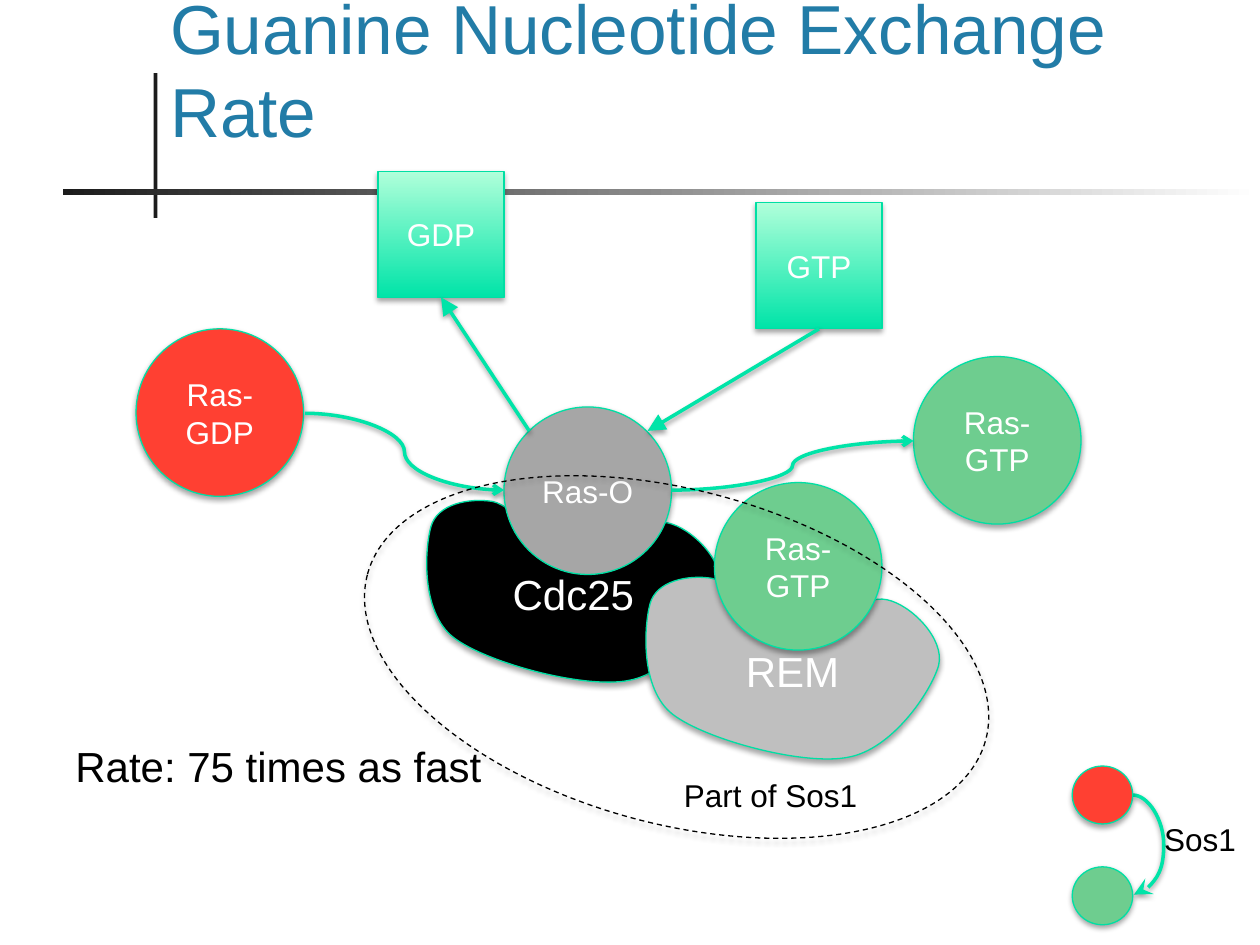
from dataclasses import dataclass

from lxml import etree
from pptx import Presentation
from pptx.dml.color import RGBColor
from pptx.enum.dml import MSO_LINE
from pptx.enum.shapes import MSO_CONNECTOR, MSO_SHAPE
from pptx.enum.text import MSO_ANCHOR, MSO_AUTO_SIZE, PP_ALIGN
from pptx.oxml.ns import qn
from pptx.util import Inches, Pt

RECT, OVAL = MSO_SHAPE.RECTANGLE, MSO_SHAPE.OVAL
STRAIGHT, CURVE = MSO_CONNECTOR.STRAIGHT, MSO_CONNECTOR.CURVE
LEFT, CENTER = PP_ALIGN.LEFT, PP_ALIGN.CENTER
TOP, MIDDLE, BOTTOM = MSO_ANCHOR.TOP, MSO_ANCHOR.MIDDLE, MSO_ANCHOR.BOTTOM
BOTTOM_SITE = 2
CIRCLE = 1.33


@dataclass(frozen=True)
class Theme:
    font: str = "Arial"
    title: str = "227CA7"
    ink: str = "1C1C1C"
    black: str = "000000"
    white: str = "FFFFFF"
    outline: str = "00DFA4"
    arrow: str = "00E4A8"
    mint: str = "B0FFDA"
    red: str = "FF4032"
    green: str = "6ECD8F"
    gray: str = "A6A6A6"
    silver: str = "BFBFBF"
    title_size: float = 39.6
    large: int = 24
    body: int = 18


THEME = Theme()

# Start point, then three points (two controls and an end) per curve, in inches.
DOMAIN_START = (3.42, 4.18)
DOMAIN_CURVES = [
    (3.37, 4.36), (3.34, 4.86), (3.6, 5.06),
    (3.86, 5.26), (4.64, 5.47), (4.99, 5.4),
    (5.34, 5.34), (5.65, 4.88), (5.71, 4.67),
    (5.76, 4.46), (5.49, 4.19), (5.3, 4.15),
    (5.1, 4.1), (4.76, 4.42), (4.53, 4.39),
    (4.3, 4.36), (4.1, 4.02), (3.91, 3.98),
    (3.72, 3.95), (3.47, 4), (3.42, 4.18),
]


def rgb(color):
    return RGBColor.from_string(color)


def write_text(sp, text, size=THEME.body, color=THEME.white, align=CENTER,
               anchor=MIDDLE, wrap=True):
    tf = sp.text_frame
    tf.word_wrap = wrap
    tf.vertical_anchor = anchor
    p = tf.paragraphs[0]
    p.alignment = align
    r = p.add_run()
    r.text = text
    r.font.name = THEME.font
    r.font.size = Pt(size)
    r.font.color.rgb = rgb(color)


def paint(sp, fill):
    """Fill with one colour, a (colour, colour, angle) gradient, or nothing."""
    if fill is None:
        sp.fill.background()
    elif isinstance(fill, str):
        sp.fill.solid()
        sp.fill.fore_color.rgb = rgb(fill)
    else:
        sp.fill.gradient()
        sp.fill.gradient_angle = fill[2]
        for stop, color in zip(sp.fill.gradient_stops, fill):
            stop.color.rgb = rgb(color)


def add_shadow(sp, alpha, distance):
    """Append a soft downward shadow; call after fill and line are set."""
    effects = etree.SubElement(sp._element.spPr, qn("a:effectLst"))
    shadow = etree.SubElement(
        effects, qn("a:outerShdw"), blurRad=str(Pt(3.1)),
        dist=str(Pt(distance)), dir="5400000", rotWithShape="0")
    color = etree.SubElement(shadow, qn("a:srgbClr"), val=THEME.black)
    etree.SubElement(color, qn("a:alpha"), val=str(alpha * 1000))


def style_shape(sp, fill, line=THEME.outline):
    paint(sp, fill)
    sp.line.color.rgb = rgb(line)
    sp.line.width = Pt(0.75)
    add_shadow(sp, 35, 1.8)


def add_node(shapes, kind, x, y, w, h, fill, text=None):
    sp = shapes.add_shape(kind, Inches(x), Inches(y), Inches(w), Inches(h))
    style_shape(sp, fill)
    if text:
        write_text(sp, text)
    return sp


def add_rule(shapes, x, y, w, h, fill):
    sp = shapes.add_shape(RECT, Inches(x), Inches(y), Inches(w), Inches(h))
    paint(sp, fill)
    sp.line.fill.background()
    sp.shadow.inherit = False


def add_label(shapes, text, x, y, w, h, size=THEME.body):
    sp = shapes.add_textbox(Inches(x), Inches(y), Inches(w), Inches(h))
    write_text(sp, text, size=size, color=THEME.black, align=LEFT,
               anchor=TOP, wrap=False)
    sp.text_frame.auto_size = MSO_AUTO_SIZE.SHAPE_TO_FIT_TEXT


def add_arrow(shapes, kind, start, end, head, head_size="lg", bend=None,
              source=None, target=None):
    """Draw an arrow; bend is the curve's sideways reach as a share of its width."""
    line = shapes.add_connector(kind, *map(Inches, start + end))
    if source is not None:
        line.begin_connect(source, BOTTOM_SITE)
    if target is not None:
        line.end_connect(target, BOTTOM_SITE)
    if bend is not None:
        guides = line._element.spPr.find(qn("a:prstGeom")).get_or_add_avLst()
        etree.SubElement(guides, qn("a:gd"), name="adj1",
                         fmla=f"val {round(bend * 100000)}")
    line.line.color.rgb = rgb(THEME.arrow)
    line.line.width = Pt(2)
    etree.SubElement(line.line._get_or_add_ln(), qn("a:tailEnd"), type=head,
                     w=head_size, len=head_size)
    add_shadow(line, 38, 1.6)


def round_outline(sp):
    """Turn each three straight segments of a freeform into one cubic curve."""
    segments = list(sp._element.iter(qn("a:lnTo")))
    for i in range(0, len(segments), 3):
        curve = etree.Element(qn("a:cubicBezTo"))
        segments[i].addprevious(curve)
        for segment in segments[i:i + 3]:
            curve.append(segment[0])
            segment.getparent().remove(segment)


def add_domain(shapes, dx, dy, fill, text):
    """Draw the protein domain outline, shifted by dx and dy."""
    def place(point):
        return Inches(point[0] + dx), Inches(point[1] + dy)

    builder = shapes.build_freeform(*place(DOMAIN_START))
    builder.add_line_segments([place(pt) for pt in DOMAIN_CURVES], close=True)
    sp = builder.convert_to_shape()
    round_outline(sp)
    style_shape(sp, fill)
    write_text(sp, text, size=THEME.large)


def add_title(slide, text):
    sp = slide.shapes.title
    sp.left, sp.top, sp.width, sp.height = map(Inches, (1.25, 0, 8.52, 1.25))
    write_text(sp, text, size=THEME.title_size, color=THEME.title,
               align=LEFT, anchor=BOTTOM)
    sp.text_frame.auto_size = MSO_AUTO_SIZE.NONE


def add_sos1_key(slide):
    shapes = slide.shapes.add_group_shape().shapes
    add_arrow(shapes, CURVE, (8.99, 6.31), (9, 7.1), "stealth", bend=25)
    for y, fill in ((6.08, THEME.red), (6.88, THEME.green)):
        add_node(shapes, OVAL, 8.51, y, 0.48, 0.46, fill)
    add_label(shapes, "Sos1", 9.14, 6.46, 0.78, 0.4)


def main():
    prs = Presentation()
    prs.slide_width, prs.slide_height = Inches(10), Inches(7.5)
    slide = prs.slides.add_slide(prs.slide_layouts[5])
    shapes = slide.shapes

    add_title(slide, "Guanine Nucleotide Exchange Rate")
    add_rule(shapes, 1.22, 0.58, 0.03, 1.15, THEME.ink)
    add_rule(shapes, 0.5, 1.5, 9.5, 0.05, (THEME.ink, THEME.white, 0))

    add_domain(shapes, 0, 0, THEME.black, "Cdc25")
    add_domain(shapes, 1.74, 0.61, THEME.silver, "REM")
    for text, x, y, fill in (("Ras-GDP", 1.08, 2.61, THEME.red),
                             ("Ras-O", 4, 3.23, THEME.gray),
                             ("Ras-GTP", 7.25, 2.83, THEME.green)):
        add_node(shapes, OVAL, x, y, CIRCLE, CIRCLE, fill, text)
    add_sos1_key(slide)

    add_arrow(shapes, CURVE, (2.42, 3.28), (4, 3.89), "arrow", "med")
    add_arrow(shapes, CURVE, (5.33, 3.89), (7.25, 3.5), "arrow", "med")
    glow = (THEME.arrow, THEME.mint, 90)
    gdp = add_node(shapes, RECT, 3, 1.36, 1, 1, glow, "GDP")
    add_arrow(shapes, STRAIGHT, (4.2, 3.42), (3.5, 2.36), "triangle", target=gdp)
    gtp = add_node(shapes, RECT, 6, 1.61, 1, 1, glow, "GTP")
    add_arrow(shapes, STRAIGHT, (6.5, 2.61), (5.14, 3.42), "triangle", source=gtp)

    add_label(shapes, "Rate: 75 times as fast", 0.5, 5.83, 3.46, 0.5, THEME.large)
    add_node(shapes, OVAL, 5.67, 3.83, CIRCLE, CIRCLE, THEME.green, "Ras-GTP")
    add_label(shapes, "Part of Sos1", 5.33, 6.11, 1.59, 0.4)
    complex_ring = shapes.add_shape(OVAL, Inches(2.83), Inches(3.89),
                                    Inches(5.08), Inches(2.65))
    complex_ring.rotation = 15
    complex_ring.line.dash_style = MSO_LINE.DASH
    style_shape(complex_ring, None, THEME.black)

    prs.save("out.pptx")


if __name__ == "__main__":
    main()
